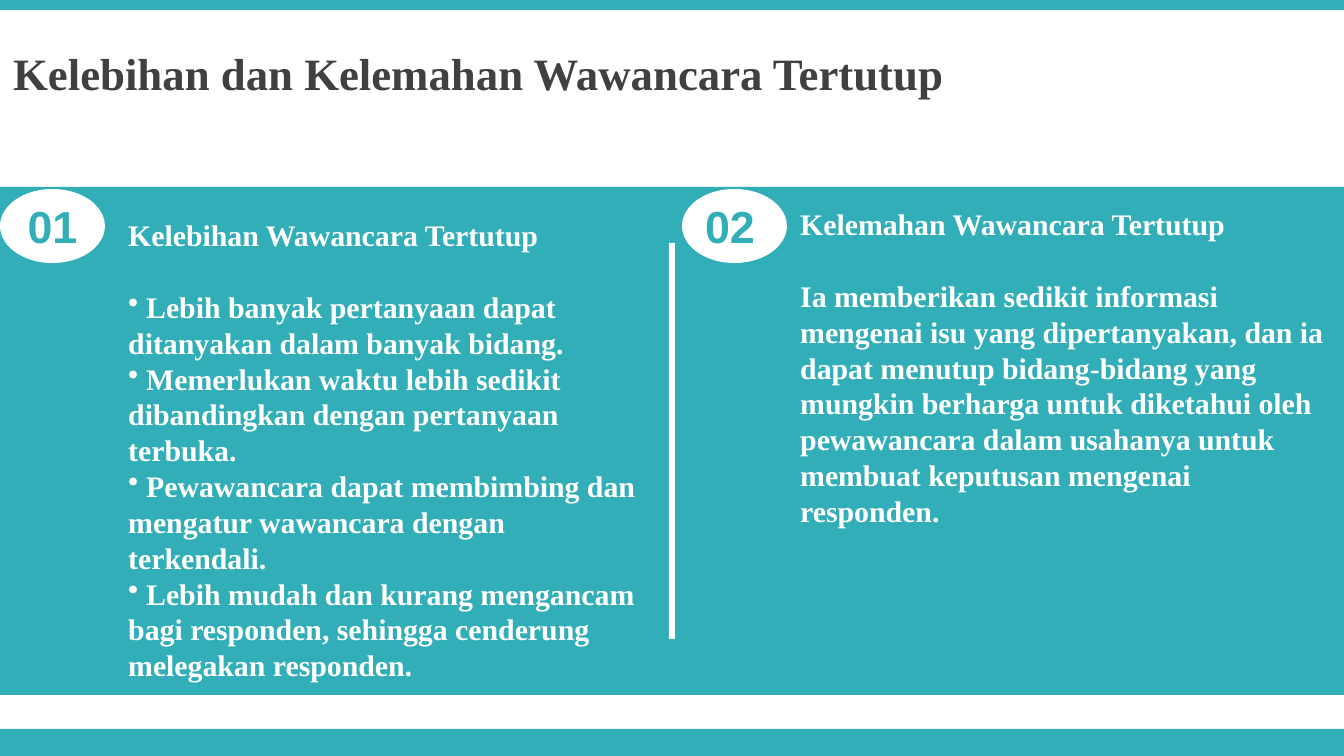
from lxml import etree
from pptx import Presentation
from pptx.dml.color import RGBColor
from pptx.enum.shapes import MSO_SHAPE
from pptx.enum.text import PP_ALIGN
from pptx.oxml.ns import qn
from pptx.util import Emu, Pt

RECT, OVAL = MSO_SHAPE.RECTANGLE, MSO_SHAPE.OVAL
LEFT, CENTER = PP_ALIGN.LEFT, PP_ALIGN.CENTER

TEAL = RGBColor(0x32, 0xAE, 0xB8)
WHITE = RGBColor(0xFF, 0xFF, 0xFF)
DARK = RGBColor(0x40, 0x40, 0x40)
SERIF, SANS = "Times New Roman", "Arial"

WIDTH, HEIGHT = 1344, 756
BODY_LINE = Pt(19.2)

STRENGTHS = [
    "Lebih banyak pertanyaan dapat ditanyakan dalam banyak bidang.",
    "Memerlukan waktu lebih sedikit dibandingkan dengan pertanyaan terbuka.",
    "Pewawancara dapat membimbing dan mengatur wawancara dengan terkendali.",
    "Lebih mudah dan kurang mengancam bagi responden, "
    "sehingga cenderung melegakan responden.",
]
WEAKNESS = (
    "Ia memberikan sedikit informasi mengenai isu yang dipertanyakan, "
    "dan ia dapat menutup bidang-bidang yang mungkin berharga untuk "
    "diketahui oleh pewawancara dalam usahanya untuk membuat keputusan "
    "mengenai responden."
)


def px(length):
    return Emu(round(length * 914400 / 134.4))


def add_block(page, kind, color, *bounds):
    block = page.shapes.add_shape(kind, *map(px, bounds))
    block.shadow.inherit = False
    block.fill.solid()
    block.fill.fore_color.rgb = color
    block.line.fill.background()


def add_box(page, bounds, top_inset):
    box = page.shapes.add_textbox(*map(px, bounds))
    box.text_frame.word_wrap = True
    box.text_frame.margin_top = px(top_inset)
    return box.text_frame


def style(para, font, size, color, align=LEFT):
    para.alignment = align
    para.font.name = font
    para.font.size = Pt(size)
    para.font.bold = True
    para.font.color.rgb = color


def add_bullet(para):
    properties = para._p.get_or_add_pPr()
    properties.set("marL", "0")
    properties.set("indent", "0")
    bullet = etree.Element(qn("a:buChar"), char="•")
    # The bullet comes before the default run properties
    properties.insert(properties.index(properties.find(qn("a:defRPr"))), bullet)


def add_label(page, text, bounds, top_inset, font, color, align=LEFT):
    para = add_box(page, bounds, top_inset).paragraphs[0]
    para.text = text
    style(para, font, 24, color, align)


def add_column(page, heading, lines, bounds, bulleted=False):
    frame = add_box(page, bounds, 7)
    frame.text = heading
    for line in lines:
        # A space parts the bullet from its text; wrapped lines stay flush left
        frame.add_paragraph().text = f" {line}" if bulleted else line
    for para in frame.paragraphs:
        style(para, SERIF, 16, WHITE)
        para.line_spacing = BODY_LINE
    frame.paragraphs[0].space_after = BODY_LINE
    if bulleted:
        for para in frame.paragraphs[1:]:
            add_bullet(para)


def main():
    deck = Presentation()
    deck.slide_width, deck.slide_height = px(WIDTH), px(HEIGHT)
    page = deck.slides.add_slide(deck.slide_layouts[6])

    # Edge bands and title
    add_block(page, RECT, TEAL, 0, 729, WIDTH, 27)
    add_block(page, RECT, TEAL, 0, 0, WIDTH, 10)
    add_label(page, "Kelebihan dan Kelemahan Wawancara Tertutup",
              (0, 21, WIDTH, 124), 25, SERIF, DARK)

    # Panel with its divider
    add_block(page, RECT, TEAL, 0, 187, WIDTH, 508)
    add_block(page, RECT, WHITE, 669, 243, 6, 396)

    # Columns
    add_column(page, "Kelebihan Wawancara Tertutup", STRENGTHS,
               (115, 210, 546, 509), bulleted=True)
    add_column(page, "Kelemahan Wawancara Tertutup", [WEAKNESS],
               (787, 199, 557, 333))

    # Numbered badges
    for number, oval_left, label_left, label_width in (
            ("01", 0, 0, 105), ("02", 682, 672, 116)):
        add_block(page, OVAL, WHITE, oval_left, 189, 105, 74)
        add_label(page, number, (label_left, 189, label_width, 67), 10,
                  SANS, TEAL, CENTER)

    deck.save("out.pptx")


if __name__ == "__main__":
    main()
